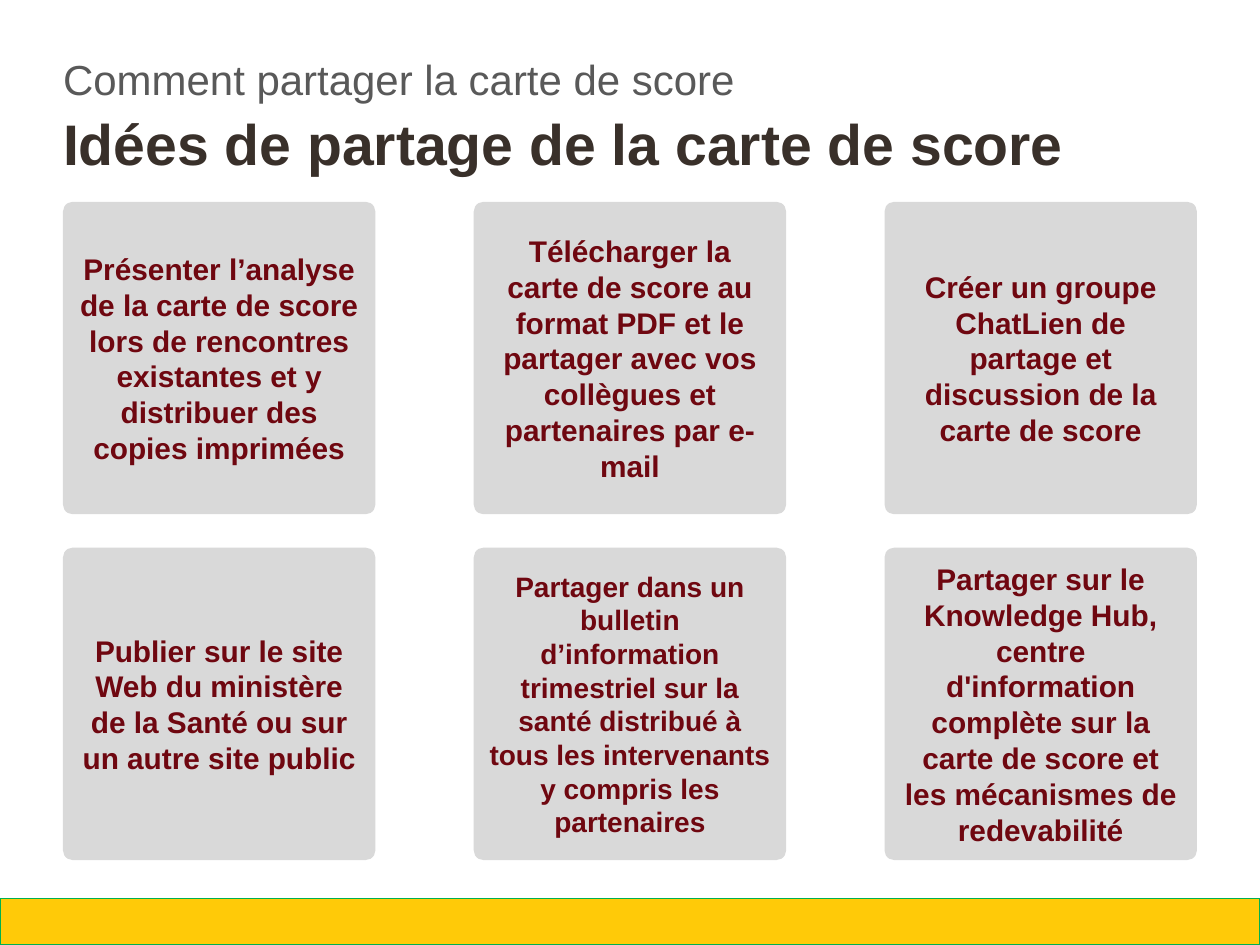
from dataclasses import dataclass

from pptx import Presentation
from pptx.dml.color import RGBColor
from pptx.enum import shapes, text
from pptx.util import Inches, Pt

TITLE = "Idées de partage de la carte de score"
SUBTITLE = "Comment partager la carte de score"
IDEAS = [  # rows of (wording, type size)
    [
        ("Présenter l’analyse de la carte de score lors de rencontres existantes et y distribuer des copies imprimées", 16.7),
        ("Télécharger la carte de score au format PDF et le partager avec vos collègues et partenaires par e-mail", 16.7),
        ("Créer un groupe ChatLien de partage et discussion de la carte de score", 16.7),
    ],
    [
        ("Publier sur le site Web du ministère de la Santé ou sur un autre site public", 16.7),
        ("Partager dans un bulletin d’information trimestriel sur la santé distribué à tous les intervenants y compris les partenaires", 15.7),
        ("Partager sur le Knowledge Hub, centre d'information complète sur la carte de score et les mécanismes de redevabilité", 16.7),
    ],
]


@dataclass(frozen=True)
class Theme:
    font: str = "Arial"
    title: str = "39302A"
    subtitle: str = "595959"
    card: str = "D9D9D9"
    card_text: str = "6F0710"
    band: str = "FFCA08"
    band_line: str = "00B050"
    title_size: float = 32
    subtitle_size: float = 23.5


THEME = Theme()
WIDTH, HEIGHT = 9.8, 7.35
MARGIN, CONTENT_WIDTH = 0.49, 8.82
CARD, CARDS_TOP, ROW_STEP = 2.43, 1.57, 2.69
COLUMN_STEP = (CONTENT_WIDTH - CARD) / 2
BAND_TOP = 6.99


def write(shape, wording, size, color, bold, align, anchor):
    tf = shape.text_frame
    tf.word_wrap = True
    tf.auto_size = text.MSO_AUTO_SIZE.NONE
    tf.vertical_anchor = anchor
    tf.text = wording
    p = tf.paragraphs[0]
    p.alignment = align
    font = p.runs[0].font
    font.name, font.size, font.bold = THEME.font, Pt(size), bold
    font.color.rgb = RGBColor.from_string(color)
    return tf


def write_heading(shape, wording, size, color, bold):
    tf = write(shape, wording, size, color, bold, text.PP_ALIGN.LEFT, text.MSO_ANCHOR.TOP)
    tf.margin_left = tf.margin_top = tf.margin_right = tf.margin_bottom = 0
    return tf


def add_filled(s, kind, left, top, width, height, fill):
    sp = s.shapes.add_shape(kind, Inches(left), Inches(top), Inches(width), Inches(height))
    sp.shadow.inherit = False
    sp.fill.solid()
    sp.fill.fore_color.rgb = RGBColor.from_string(fill)
    sp.line.fill.background()
    return sp


def add_card(s, row, column, wording, size):
    left, top = MARGIN + column * COLUMN_STEP, CARDS_TOP + row * ROW_STEP
    sp = add_filled(s, shapes.MSO_SHAPE.ROUNDED_RECTANGLE, left, top, CARD, CARD, THEME.card)
    sp.adjustments[0] = 0.031
    write(sp, wording, size, THEME.card_text, True, text.PP_ALIGN.CENTER, text.MSO_ANCHOR.MIDDLE)


def main():
    prs = Presentation()
    prs.slide_width, prs.slide_height = Inches(WIDTH), Inches(HEIGHT)
    s = prs.slides.add_slide(prs.slide_layouts[5])

    band = add_filled(s, shapes.MSO_SHAPE.RECTANGLE, 0, BAND_TOP, WIDTH, HEIGHT - BAND_TOP, THEME.band)
    band.line.color.rgb = RGBColor.from_string(THEME.band_line)
    band.line.width = Pt(0.75)

    title = s.shapes.title
    title.left, title.top = Inches(MARGIN), Inches(0.84)
    title.width, title.height = Inches(CONTENT_WIDTH), Inches(0.54)
    write_heading(title, TITLE, THEME.title_size, THEME.title, True)

    subtitle = s.shapes.add_textbox(Inches(MARGIN), Inches(0.46), Inches(CONTENT_WIDTH), Inches(0.36))
    tf = write_heading(subtitle, SUBTITLE, THEME.subtitle_size, THEME.subtitle, False)
    tf.paragraphs[0].line_spacing = 0.9

    for row, ideas in enumerate(IDEAS):
        for column, (wording, size) in enumerate(ideas):
            add_card(s, row, column, wording, size)

    prs.save("out.pptx")


if __name__ == "__main__":
    main()
